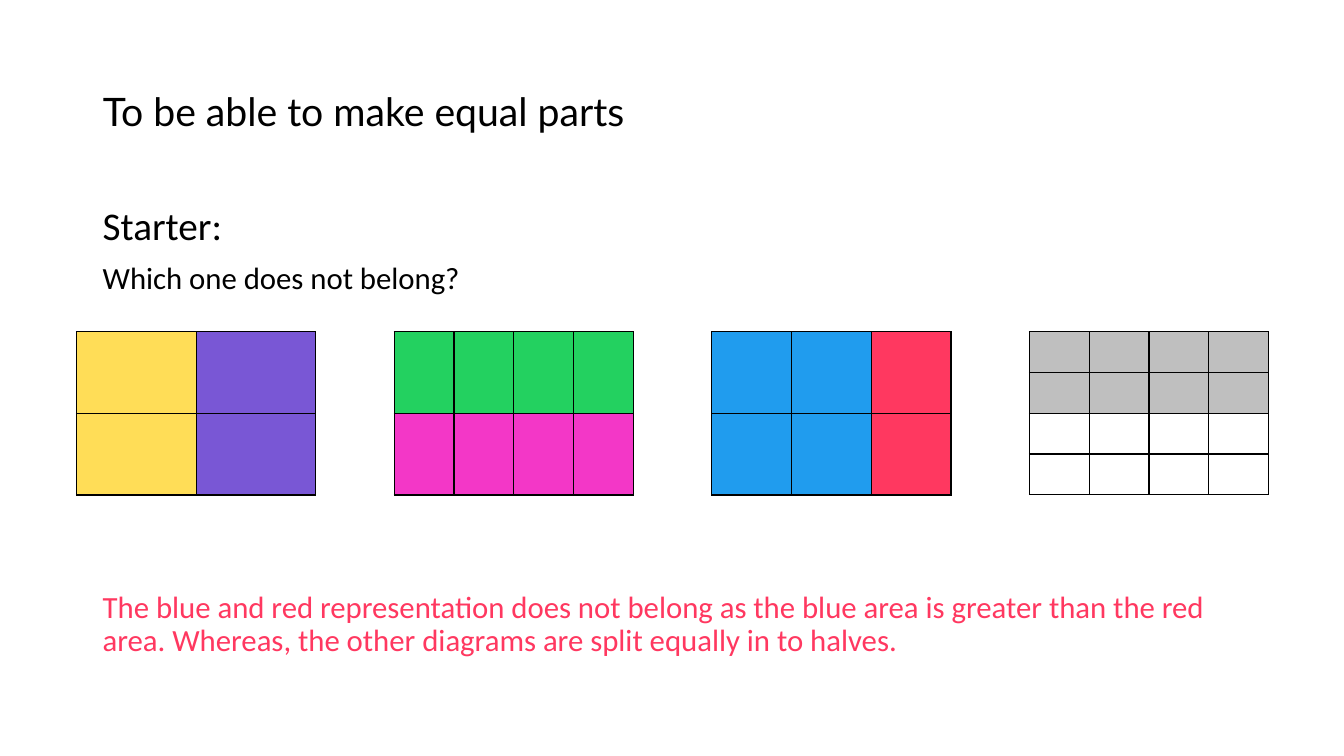
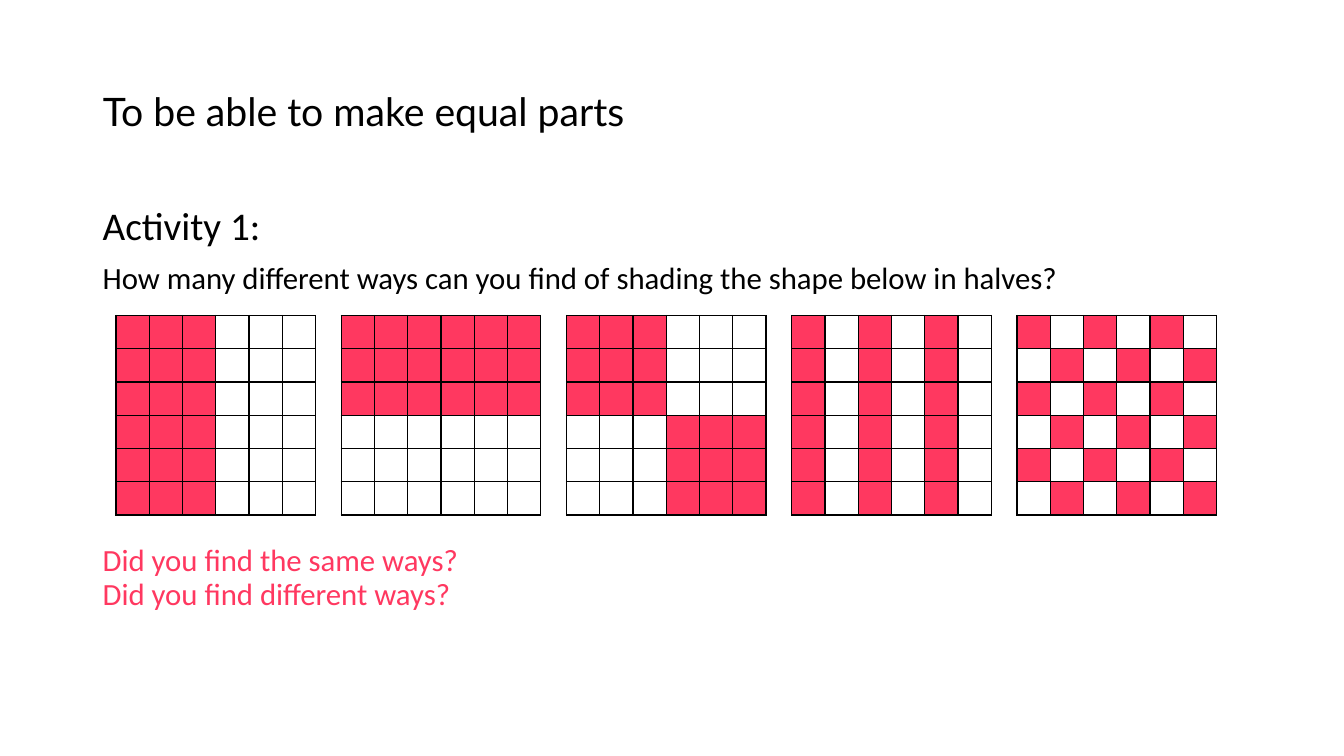
import pptx
import pptx.dml.color
import pptx.enum.text
import pptx.oxml
import pptx.oxml.ns
import pptx.util

COLOURS = {
    "black": "000000", "white": "FFFFFF", "grey": "BFBFBF",
    "yellow": "FFDD57", "purple": "7957D5", "green": "23D160",
    "pink": "F337C7", "blue": "209CEE", "red": "FF3860",
}
TITLE = "To be able to make equal parts"

# The slide is measured on a grid of 100 columns and 100 rows.
WIDTH, HEIGHT = pptx.util.Inches(13.333), pptx.util.Inches(7.5)
COLUMN, ROW = WIDTH / 100, HEIGHT / 100
TEXT_LEFT = 6.9


def write(para, text, font="Calibri", size=22, colour="black", before=0):
    """Fill a paragraph; each newline in the text becomes a line break."""
    para.alignment = pptx.enum.text.PP_ALIGN.LEFT
    para.line_spacing = 0.9
    para.space_before = pptx.util.Pt(before)
    for number, line in enumerate(text.split("\n")):
        if number:
            para.add_line_break()
        span = para.add_run()
        span.text = line
        span.font.name = font
        span.font.size = pptx.util.Pt(size)
        span.font.color.rgb = pptx.dml.color.RGBColor.from_string(COLOURS[colour])


def draw_grid(page, left, top, width, height, rows, columns, shade):
    """Draw a bordered table; shade(row, column) names the colour of a cell."""
    frame = page.shapes.add_table(
        rows, columns, int(left * COLUMN), int(top * ROW),
        int(width * COLUMN), int(height * ROW))
    table = frame.table
    table.first_row = table.horz_banding = False
    for row in range(rows):
        for column in range(columns):
            cell = table.cell(row, column)
            cell.margin_left = cell.margin_right = 0
            cell.margin_top = cell.margin_bottom = 0
            properties = cell._tc.get_or_add_tcPr()
            for side in "LRTB":
                properties.append(pptx.oxml.parse_xml(
                    f'<a:ln{side} {pptx.oxml.ns.nsdecls("a")} w="12700"><a:solidFill>'
                    f'<a:srgbClr val="{COLOURS["black"]}"/></a:solidFill></a:ln{side}>'))
            cell.fill.solid()
            cell.fill.fore_color.rgb = pptx.dml.color.RGBColor.from_string(
                COLOURS[shade(row, column)])


# Each grid: rows, columns, and the rule that colours its cells.
starter_grids = [
    (2, 2, lambda row, column: "yellow" if column < 1 else "purple"),
    (2, 4, lambda row, column: "green" if row < 1 else "pink"),
    (2, 3, lambda row, column: "blue" if column < 2 else "red"),
    (4, 4, lambda row, column: "grey" if row < 2 else "white"),
]

halving_rules = [
    lambda row, column: column < 3,
    lambda row, column: row < 3,
    lambda row, column: (row < 3) == (column < 3),
    lambda row, column: column % 2 == 0,
    lambda row, column: (row + column) % 2 == 0,
]
activity_grids = [
    (6, 6, lambda row, column, rule=rule: "red" if rule(row, column) else "white")
    for rule in halving_rules
]

lessons = [
    {
        "heading": "Starter:",
        "question": "Which one does not belong?",
        "answer": "The blue and red representation does not belong as the blue area "
                  "is greater than the red area. Whereas, the other diagrams are "
                  "split equally in to halves.",
        "answer_gap": 211,
        "grids": starter_grids,
        "left": 5.7, "pitch": 23.63, "top": 43.87, "width": 17.8, "height": 21.6,
    },
    {
        "heading": "Activity 1:",
        "question": "How many different ways can you find of shading the shape "
                    "below in halves?",
        "answer": "Did you find the same ways?\nDid you find different ways?",
        "answer_gap": 178,
        "grids": activity_grids,
        "left": 8.63, "pitch": 16.76, "top": 41.73, "width": 14.85, "height": 26.4,
    },
]

deck = pptx.Presentation()
deck.slide_width, deck.slide_height = WIDTH, HEIGHT
title_only = deck.slide_layouts.get_by_name("Title Only")

for lesson in lessons:
    page = deck.slides.add_slide(title_only)

    title = page.shapes.title
    title.left, title.top = int(TEXT_LEFT * COLUMN), int(5.33 * ROW)
    title.width, title.height = int(72 * COLUMN), int(19.33 * ROW)
    title.text_frame.vertical_anchor = pptx.enum.text.MSO_ANCHOR.MIDDLE
    write(title.text_frame.paragraphs[0], TITLE, font="Lato", size=28)

    box = page.shapes.add_textbox(
        int(TEXT_LEFT * COLUMN), int(26.67 * ROW),
        int(86.25 * COLUMN), int(63.47 * ROW))
    body = box.text_frame
    body.word_wrap = True
    write(body.paragraphs[0], lesson["heading"], size=28)
    write(body.add_paragraph(), lesson["question"], before=10)
    write(body.add_paragraph(), lesson["answer"], colour="red",
          before=lesson["answer_gap"])

    for number, (rows, columns, shade) in enumerate(lesson["grids"]):
        draw_grid(page, lesson["left"] + number * lesson["pitch"], lesson["top"],
                  lesson["width"], lesson["height"], rows, columns, shade)

deck.save("out.pptx")
